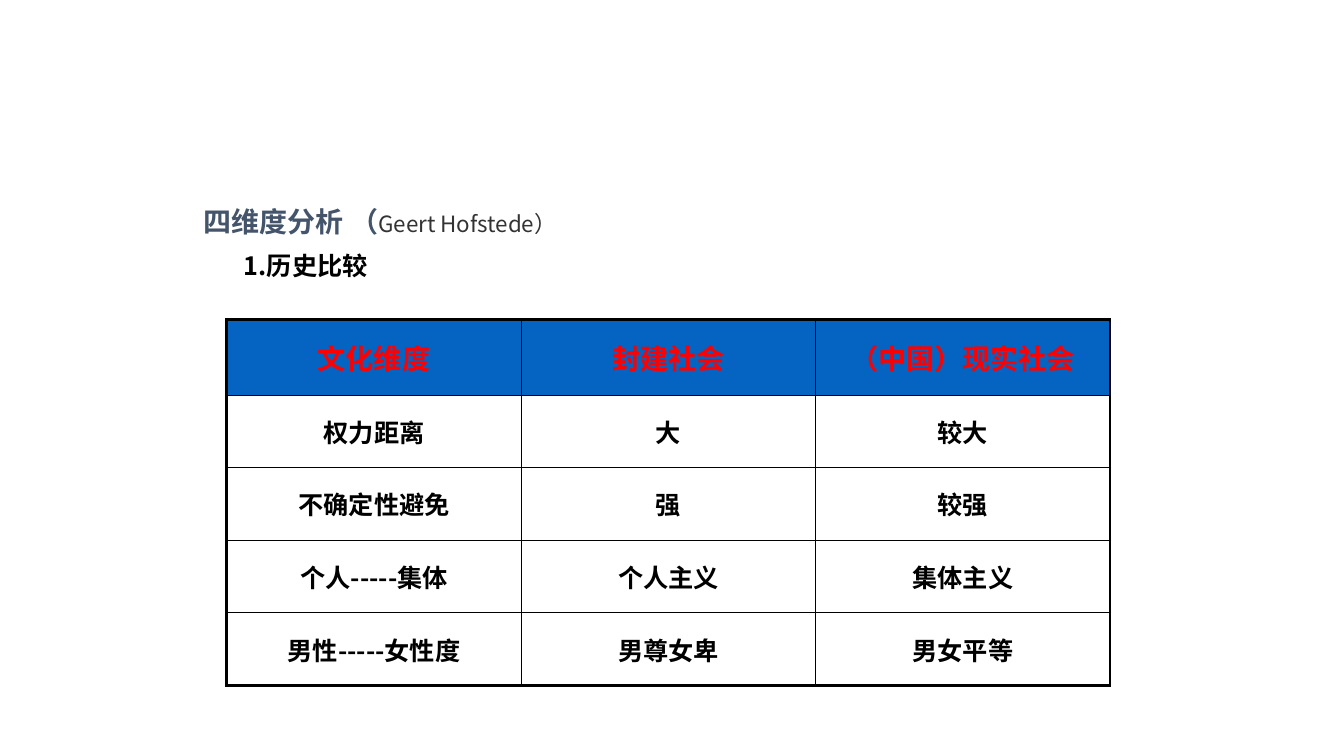
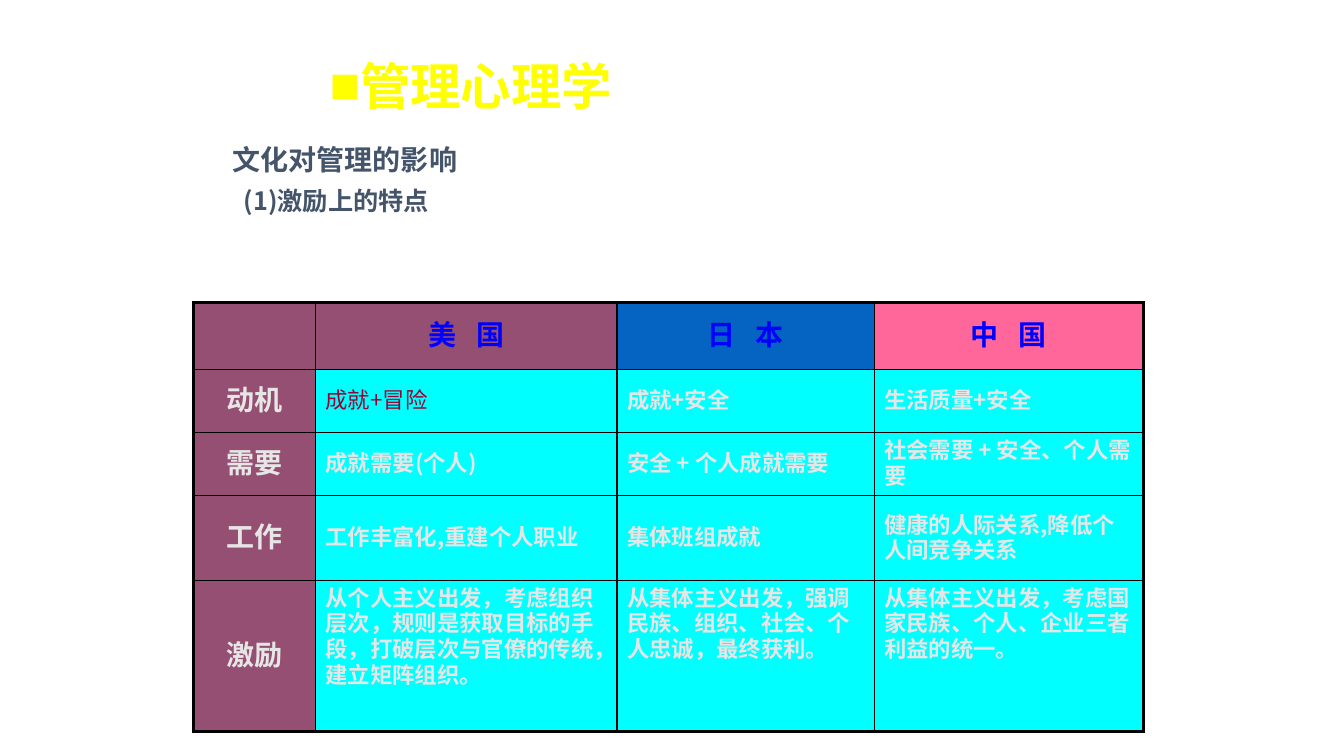
from dataclasses import dataclass

from lxml.etree import SubElement
from pptx import Presentation
from pptx.dml.color import RGBColor
from pptx.enum.text import MSO_ANCHOR as Anchor, MSO_AUTO_SIZE as AutoSize, PP_ALIGN as Align
from pptx.oxml.ns import qn
from pptx.util import Inches, Pt


@dataclass(frozen=True)
class Theme:
    sans: str = "Noto Sans CJK SC"
    arial: str = "Arial"
    serif: str = "Times New Roman"
    paper: str = "FFFFFF"
    ink: str = "000000"
    slate: str = "44546A"
    gray: str = "333333"
    red: str = "FF0000"
    crimson: str = "990033"
    yellow: str = "FFFF00"
    blue: str = "0563C1"
    bright_blue: str = "0000FF"
    plum: str = "954F72"
    pink: str = "FF6699"
    cyan: str = "00FFFF"
    silver: str = "E7E6E6"
    banner: int = 36
    heading: int = 20
    body: int = 18
    small: int = 16
    outer_line: float = 2.25
    inner_line: float = 1


THEME = Theme()


def write(paragraph, text, size=THEME.heading, color=THEME.slate, bold=True,
          font=THEME.sans, tracking=0):
    run = paragraph.add_run()
    run.text = text
    run.font.size = Pt(size)
    run.font.bold = bold
    run.font.name = font
    run.font.color.rgb = RGBColor.from_string(color)
    properties = run.font._element
    SubElement(properties, qn("a:ea")).set("typeface", THEME.sans)
    if tracking:
        properties.set("spc", str(tracking * 100))


class Deck:
    def __init__(self, theme):
        self.theme = theme
        self.presentation = Presentation()
        self.presentation.slide_width = Inches(13.33)
        self.presentation.slide_height = Inches(7.5)
        self.slide = None

    def add_slide(self):
        title_only = self.presentation.slide_layouts[5]
        self.slide = self.presentation.slides.add_slide(title_only)

    def prepare(self, shape):
        frame = shape.text_frame
        frame.word_wrap = True
        frame.auto_size = AutoSize.NONE
        frame.vertical_anchor = Anchor.MIDDLE
        paragraph = frame.paragraphs[0]
        paragraph.alignment = Align.LEFT
        return paragraph

    def title(self, left, top, width, height, bullet=None):
        shape = self.slide.shapes.title
        shape.left, shape.top = Inches(left), Inches(top)
        shape.width, shape.height = Inches(width), Inches(height)
        paragraph = self.prepare(shape)
        if bullet:
            properties = paragraph._p.get_or_add_pPr()
            properties.set("marL", "0")
            properties.set("indent", "0")
            SubElement(properties, qn("a:buFont")).set("typeface", self.theme.serif)
            SubElement(properties, qn("a:buChar")).set("char", bullet)
        return paragraph

    def label(self, text, left, top, **style):
        shape = self.slide.shapes.add_textbox(
            Inches(left), Inches(top), Inches(6), Inches(0.4))
        write(self.prepare(shape), text, **style)

    def border(self, cell, thick_sides):
        properties = cell._tc.get_or_add_tcPr()
        for side in "LRTB":
            width = self.theme.outer_line if side in thick_sides else self.theme.inner_line
            line = SubElement(properties, qn(f"a:ln{side}"), w=str(Pt(width)))
            fill = SubElement(line, qn("a:solidFill"))
            SubElement(fill, qn("a:srgbClr"), val=self.theme.ink)

    def table(self, rows, left, top, widths, heights, style_of, line_spacing=1):
        shape = self.slide.shapes.add_table(
            len(rows), len(widths), Inches(left), Inches(top),
            Inches(sum(widths)), Inches(sum(heights)))
        table = shape.table
        table.horz_banding = False
        for column, width in zip(table.columns, widths):
            column.width = Inches(width)
        for row, height in zip(table.rows, heights):
            row.height = Inches(height)
        last_row, last_column = len(rows) - 1, len(widths) - 1
        for r, texts in enumerate(rows):
            for c, text in enumerate(texts):
                cell = table.cell(r, c)
                edges = {"L": c == 0, "R": c == last_column, "T": r == 0, "B": r == last_row}
                self.border(cell, [side for side, outer in edges.items() if outer])
                fill, align, anchor, style = style_of(r, c)
                cell.fill.solid()
                cell.fill.fore_color.rgb = RGBColor.from_string(fill)
                cell.vertical_anchor = anchor
                paragraph = cell.text_frame.paragraphs[0]
                paragraph.alignment = align
                paragraph.line_spacing = line_spacing
                paragraph.space_before = Pt(style["size"] * 0.2)
                if text:
                    write(paragraph, text, **style)


def history_style(row, column):
    if row == 0:
        style = dict(size=THEME.heading, color=THEME.red, font=THEME.arial)
        return THEME.blue, Align.CENTER, Anchor.MIDDLE, style
    style = dict(size=THEME.body, color=THEME.ink)
    return THEME.paper, Align.CENTER, Anchor.MIDDLE, style


def motivation_style(row, column):
    if row == 0:
        fill = (THEME.plum, THEME.plum, THEME.blue, THEME.pink)[column]
        style = dict(size=THEME.heading, color=THEME.bright_blue, tracking=5)
        return fill, Align.CENTER, Anchor.MIDDLE, style
    if column == 0:
        style = dict(size=THEME.heading, color=THEME.silver)
        return THEME.plum, Align.CENTER, Anchor.MIDDLE, style
    accented = (row, column) == (1, 1)
    style = dict(size=THEME.small, bold=not accented,
                 color=THEME.crimson if accented else THEME.silver)
    anchor = Anchor.TOP if row == 4 else Anchor.MIDDLE
    return THEME.cyan, Align.LEFT, anchor, style


def history_slide(deck):
    deck.add_slide()
    title = deck.title(1.92, 1.95, 9.54, 0.5)
    write(title, "四维度分析 （")
    write(title, "Geert Hofstede）", size=THEME.small, color=THEME.gray, bold=False)
    deck.label("1.历史比较", 2.32, 2.43, size=THEME.body, color=THEME.ink)
    rows = [
        ("文化维度", "封建社会", "（中国）现实社会"),
        ("权力距离", "大", "较大"),
        ("不确定性避免", "强", "较强"),
        ("个人-----集体", "个人主义", "集体主义"),
        ("男性-----女性度", "男尊女卑", "男女平等"),
    ]
    deck.table(rows, 2.25, 3.17, [2.92] * 3, [0.75] + [0.72] * 4, history_style)


def motivation_slide(deck):
    deck.add_slide()
    title = deck.title(3.17, 0.5, 7.67, 0.7, bullet="■")
    write(title, "管理心理学", size=THEME.banner, color=THEME.yellow, font=THEME.serif)
    deck.label("文化对管理的影响", 2.21, 1.38)
    deck.label("(1)激励上的特点", 2.32, 1.79, size=THEME.body)
    rows = [
        ("", "美 国", "日 本", "中 国"),
        ("动机", "成就+冒险", "成就+安全", "生活质量+安全"),
        ("需要", "成就需要(个人)", "安全 + 个人成就需要", "社会需要 + 安全、个人需要"),
        ("工作", "工作丰富化,重建个人职业", "集体班组成就",
         "健康的人际关系,降低个人间竞争关系"),
        ("激励",
         "从个人主义出发，考虑组织层次，规则是获取目标的手段，打破层次与官僚的传统，建立矩阵组织。",
         "从集体主义出发，强调民族、组织、社会、个人忠诚，最终获利。",
         "从集体主义出发，考虑国家民族、个人、企业三者利益的统一。"),
    ]
    deck.table(rows, 1.92, 3, [1.21, 2.99, 2.55, 2.67], [0.67, 0.62, 0.63, 0.84, 1.5],
               motivation_style, line_spacing=0.8)


def main():
    deck = Deck(THEME)
    history_slide(deck)
    motivation_slide(deck)
    deck.presentation.save("out.pptx")


if __name__ == "__main__":
    main()
